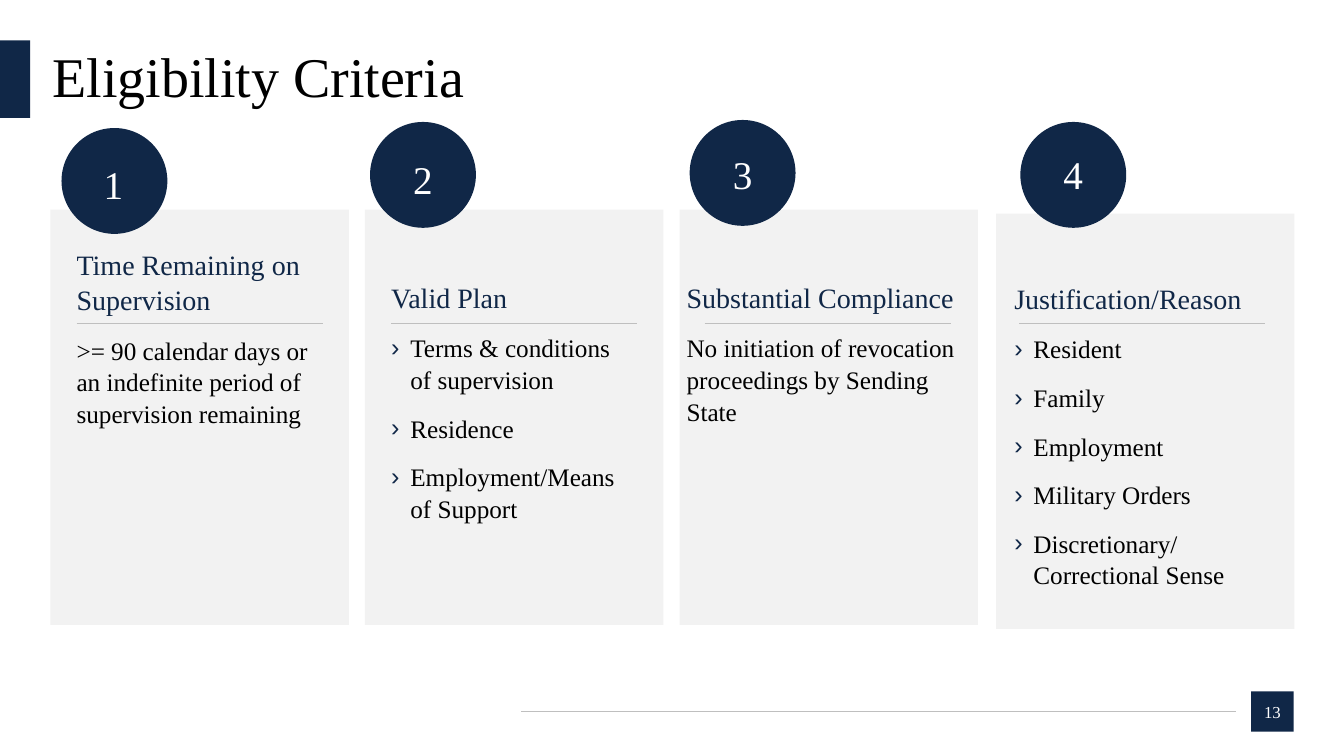
from lxml import etree
from pptx import Presentation
from pptx.dml.color import RGBColor
from pptx.enum.shapes import MSO_CONNECTOR, MSO_SHAPE
from pptx.enum.text import MSO_ANCHOR, PP_ALIGN
from pptx.oxml.ns import qn
from pptx.util import Inches, Pt

RECTANGLE, OVAL = MSO_SHAPE.RECTANGLE, MSO_SHAPE.OVAL
STRAIGHT = MSO_CONNECTOR.STRAIGHT
TOP, MIDDLE = MSO_ANCHOR.TOP, MSO_ANCHOR.MIDDLE
LEFT, CENTER = PP_ALIGN.LEFT, PP_ALIGN.CENTER

FONT = "Times New Roman"
COLORS = {"navy": "102747", "panel": "F2F2F2", "rule": "BFBFBF",
          "text": "000000", "white": "FFFFFF"}

PANEL_WIDTH, PANEL_HEIGHT = 2.96, 4.12
BADGE_SIZE = 1.05
RULE_TOP, RULE_WIDTH = 3.21, 2.44

# Each position is (left, top); text also has (width, height)
CRITERIA = [
    {"heading": "Time Remaining on Supervision",
     "items": [">= 90 calendar days or an indefinite period of supervision remaining"],
     "bulleted": False, "panel": (0.5, 2.08), "badge": (0.61, 1.27),
     "number": (0.86, 1.52), "text": (0.76, 2.44, 2.44, 1.75), "rule": 0.76},
    {"heading": "Valid Plan",
     "items": ["Terms & conditions of supervision", "Residence",
               "Employment/Means of Support"],
     "bulleted": True, "panel": (3.62, 2.08), "badge": (3.67, 1.21),
     "number": (3.93, 1.47), "text": (3.88, 2.77, 2.44, 3.3), "rule": 3.88},
    {"heading": "Substantial Compliance",
     "items": ["No initiation of revocation proceedings by Sending State"],
     "bulleted": False, "panel": (6.74, 2.08), "badge": (6.84, 1.19),
     "number": (7.1, 1.42), "text": (6.81, 2.77, 2.87, 1.41), "rule": 6.99},
    {"heading": "Justification/Reason",
     "items": ["Resident", "Family", "Employment", "Military Orders",
               "Discretionary/ Correctional Sense"],
     "bulleted": True, "panel": (9.88, 2.12), "badge": (10.12, 1.21),
     "number": (10.38, 1.42), "text": (10.06, 2.78, 2.44, 3.47), "rule": 10.11},
]


def rgb(name):
    return RGBColor.from_string(COLORS[name])


def add_filled_shape(slide, kind, left, top, width, height, color):
    shape = slide.shapes.add_shape(kind, Inches(left), Inches(top),
                                   Inches(width), Inches(height))
    shape.shadow.inherit = False
    shape.fill.solid()
    shape.fill.fore_color.rgb = rgb(color)
    shape.line.fill.background()
    return shape


def add_rule(slide, left, top, width):
    line = slide.shapes.add_connector(STRAIGHT, Inches(left), Inches(top),
                                      Inches(left + width), Inches(top))
    line.line.color.rgb = rgb("rule")
    line.line.width = Pt(0.5)
    etree.SubElement(line._element.spPr, qn("a:effectLst"))


def add_text_box(slide, left, top, width, height, anchor=TOP, inset=True):
    frame = slide.shapes.add_textbox(Inches(left), Inches(top),
                                     Inches(width), Inches(height)).text_frame
    frame.word_wrap = True
    frame.vertical_anchor = anchor
    if not inset:
        frame.margin_left = frame.margin_right = 0
        frame.margin_top = frame.margin_bottom = 0
    return frame


def add_bullet(paragraph):
    properties = paragraph._p.get_or_add_pPr()
    properties.set("marL", str(Inches(0.19)))
    properties.set("indent", str(-Inches(0.19)))
    bullet_color = etree.SubElement(properties, qn("a:buClr"))
    etree.SubElement(bullet_color, qn("a:srgbClr"), val=COLORS["navy"])
    etree.SubElement(properties, qn("a:buFont"), typeface="Arial")
    etree.SubElement(properties, qn("a:buChar"), char="›")


def write(frame, text, size=18, color="text", align=LEFT, spacing=1.05,
          after=0, bulleted=False):
    """Fill the first paragraph if it is free, otherwise add one."""
    first = frame.paragraphs[0]
    paragraph = frame.add_paragraph() if first.runs else first
    paragraph.alignment = align
    paragraph.line_spacing = spacing
    paragraph.space_after = Pt(after)
    if bulleted:
        add_bullet(paragraph)
    run = paragraph.add_run()
    run.text = text
    run.font.name = FONT
    run.font.size = Pt(size)
    run.font.color.rgb = rgb(color)


def add_criterion(slide, number, criterion):
    # Panel and numbered badge
    add_filled_shape(slide, RECTANGLE, *criterion["panel"],
                     PANEL_WIDTH, PANEL_HEIGHT, "panel")
    add_filled_shape(slide, OVAL, *criterion["badge"],
                     BADGE_SIZE, BADGE_SIZE, "navy")
    write(add_text_box(slide, *criterion["number"], 0.53, 0.57), str(number),
          size=28, color="white", align=CENTER)

    # Heading, rule and details
    add_rule(slide, criterion["rule"], RULE_TOP, RULE_WIDTH)
    frame = add_text_box(slide, *criterion["text"], inset=False)
    write(frame, criterion["heading"], size=20, color="navy", after=12)
    for item in criterion["items"]:
        write(frame, item, after=12, bulleted=criterion["bulleted"])


def main():
    presentation = Presentation()
    presentation.slide_width = Inches(13.33)
    presentation.slide_height = Inches(7.5)
    slide = presentation.slides.add_slide(presentation.slide_layouts[6])

    # Title with side accent
    title = add_text_box(slide, 0.52, 0.4, 12.31, 0.77, anchor=MIDDLE, inset=False)
    write(title, "Eligibility Criteria", size=40, spacing=0.9)
    add_filled_shape(slide, RECTANGLE, 0, 0.4, 0.3, 0.77, "navy")

    # Footer with page number
    page = add_filled_shape(slide, RECTANGLE, 12.41, 6.86, 0.42, 0.4, "navy")
    page.text_frame.vertical_anchor = MIDDLE
    write(page.text_frame, "13", size=12, color="white", align=CENTER, spacing=1.0)
    add_rule(slide, 5.17, 7.06, 7.09)

    # Four criteria
    for number, criterion in enumerate(CRITERIA, start=1):
        add_criterion(slide, number, criterion)

    presentation.save("out.pptx")


if __name__ == "__main__":
    main()
